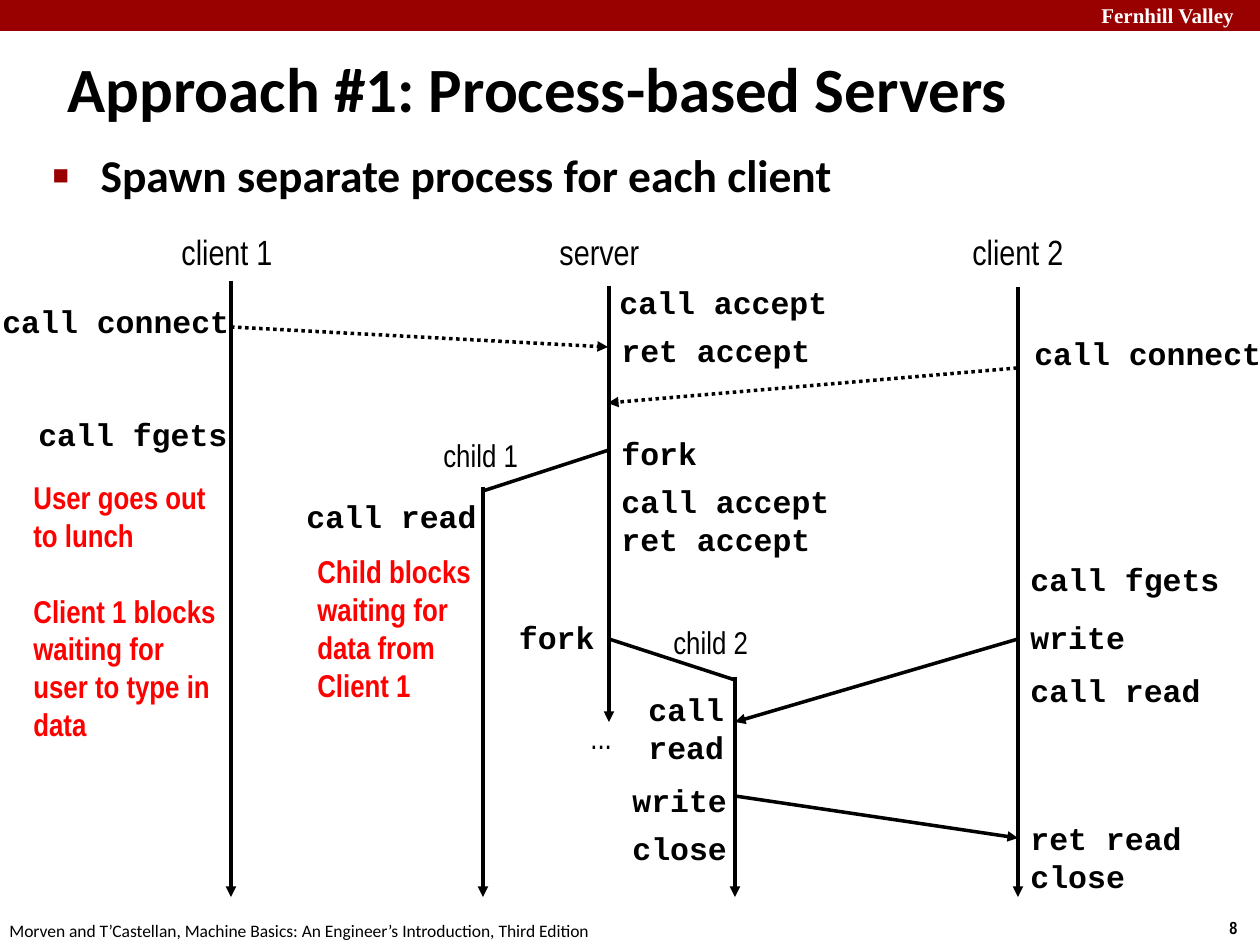
from lxml import etree
from pptx import Presentation
from pptx.dml.color import RGBColor
from pptx.enum.dml import MSO_LINE
from pptx.enum.shapes import MSO_CONNECTOR, MSO_SHAPE
from pptx.enum.text import MSO_ANCHOR, MSO_AUTO_SIZE, PP_ALIGN
from pptx.oxml.ns import qn
from pptx.util import Pt

PX = 914400 / 126
LEFT, RIGHT = PP_ALIGN.LEFT, PP_ALIGN.RIGHT
MIDDLE, TOP = MSO_ANCHOR.MIDDLE, MSO_ANCHOR.TOP
STRAIGHT, DOTTED = MSO_CONNECTOR.STRAIGHT, MSO_LINE.ROUND_DOT
RECTANGLE = MSO_SHAPE.RECTANGLE
FIXED = MSO_AUTO_SIZE.NONE
BLACK, WHITE, RED, MAROON = "000000", "FFFFFF", "FF0000", "990000"
NARROW, MONO, SANS, SERIF = "Arial Narrow", "Courier New", "Calibri", "Times New Roman"
CODE_CHAR, CODE_INSETS = 19, 26
CLIENT1, CHILD1, SERVER, CHILD2, CLIENT2 = 231, 483, 609, 735, 1018
BOTTOM = 897

deck = Presentation()
deck.slide_width, deck.slide_height = round(1260 * PX), round(945 * PX)
page = deck.slides.add_slide(deck.slide_layouts[1])


def write(text, left, top, width, height, box=None, font=NARROW, size=18,
          color=BLACK, bold=False, align=LEFT, anchor=TOP, before=()):
    bounds = [round(value * PX) for value in (left, top, width, height)]
    box = box or page.shapes.add_textbox(*bounds)
    box.left, box.top, box.width, box.height = bounds
    frame = box.text_frame
    frame.word_wrap = True
    frame.auto_size = FIXED
    frame.vertical_anchor = anchor
    frame.text = text
    for para in frame.paragraphs:
        para.alignment = align
        span = para.runs[0]
        span.font.name, span.font.size, span.font.bold = font, Pt(size), bold
        span.font.color.rgb = RGBColor.from_string(color)
    for para, space in zip(frame.paragraphs, before):
        para.space_before = Pt(space)
    return box


def connect(x1, y1, x2, y2, arrow=True, dotted=False):
    line = page.shapes.add_connector(
        STRAIGHT, *[round(value * PX) for value in (x1, y1, x2, y2)])
    line.line.width = Pt(2)
    line.line.color.rgb = RGBColor.from_string(BLACK)
    if dotted:
        line.line.dash_style = DOTTED
    properties = line._element.spPr
    if arrow:
        etree.SubElement(properties.find(qn("a:ln")), qn("a:tailEnd"), type="triangle")
    etree.SubElement(properties, qn("a:effectLst"))


banner = page.shapes.add_shape(RECTANGLE, 0, 0, deck.slide_width, round(31 * PX))
banner.shadow.inherit = False
banner.fill.solid()
banner.fill.fore_color.rgb = RGBColor.from_string(MAROON)
banner.line.fill.background()
write("Fernhill Valley", 1089, -4, 180, 38, font=SERIF, size=12, color=WHITE, bold=True)
write("8", 1217, 911, 43, 34, size=10, bold=True)
write("Morven and T’Castellan, Machine Basics: An Engineer’s Introduction, Third Edition",
      -3, 914, 640, 34, font=SANS, size=10)

write("Approach #1: Process-based Servers", 55, 34, 1202, 107, box=page.shapes.title,
      font=SANS, size=36, bold=True, anchor=MIDDLE)
body = write("Spawn separate process for each client", 40, 141, 1220, 746,
             box=page.placeholders[1], font=SANS, size=26, bold=True, before=[5])
bullet = body.text_frame.paragraphs[0]._p.get_or_add_pPr()
bullet.set("marL", str(round(48 * PX)))
bullet.set("indent", str(round(-48 * PX)))
bullet_color = etree.SubElement(bullet, qn("a:buClr"))
etree.SubElement(bullet_color, qn("a:srgbClr"), val=MAROON)
etree.SubElement(bullet, qn("a:buSzPct"), val="60000")
etree.SubElement(bullet, qn("a:buChar"), char="■")

for x, top, bottom in [(CLIENT1, 281, BOTTOM), (SERVER, 286, 722), (CLIENT2, 287, BOTTOM),
                       (CHILD1, 487, BOTTOM), (CHILD2, 677, BOTTOM)]:
    connect(x, top, x, bottom)

connect(CLIENT1, 327, SERVER - 1, 347, dotted=True)
connect(CLIENT2 - 1, 368, SERVER - 1, 403, dotted=True)
connect(SERVER, 450, CHILD1, 491, arrow=False)
connect(SERVER, 639, CHILD2, 680, arrow=False)
connect(CLIENT2, 639, CHILD2, 722)
connect(CHILD2, 796, CLIENT2, 838)

for name, left in [("client 1", 169), ("server", 547), ("client 2", 960)]:
    write(name, left, 224, 119, 55, size=20)
for name, left, top, width in [("child 1", 431, 430, 116), ("child 2", 661, 617, 116),
                               ("...", 578, 712, 52)]:
    write(name, left, top, width, 50)

for call, left, top in [
    ("call connect", -10, 296),
    ("call fgets", 26, 409),
    ("call accept", 607, 277),
    ("ret accept", SERVER, 325),
    ("fork", SERVER, 428),
    ("call accept", SERVER, 476),
    ("ret accept", SERVER, 514),
    ("call read", 294, 491),
    ("call connect", 1022, 328),
    ("call fgets", CLIENT2, 554),
    ("write", CLIENT2, 612),
    ("call read", CLIENT2, 665),
    ("ret read", CLIENT2, 813),
    ("close", CLIENT2, 851),
    ("write", 620, 775),
    ("close", 620, 823),
]:
    write(call, left, top, len(call) * CODE_CHAR + CODE_INSETS, 50, font=MONO, bold=True)
write("fork", 505, 612, 102, 50, font=MONO, bold=True, align=RIGHT)
write("call\nread", 636, 684, 121, 89, font=MONO, bold=True)

write("User goes out to lunch\nClient 1 blocks\nwaiting for user to type in data",
      21, 472, 210, 280, color=RED, bold=True, before=[0, 21.6, 0])
write("Child blocks waiting for data from Client 1", 305, 546, 210, 165, color=RED, bold=True)

deck.save("out.pptx")
